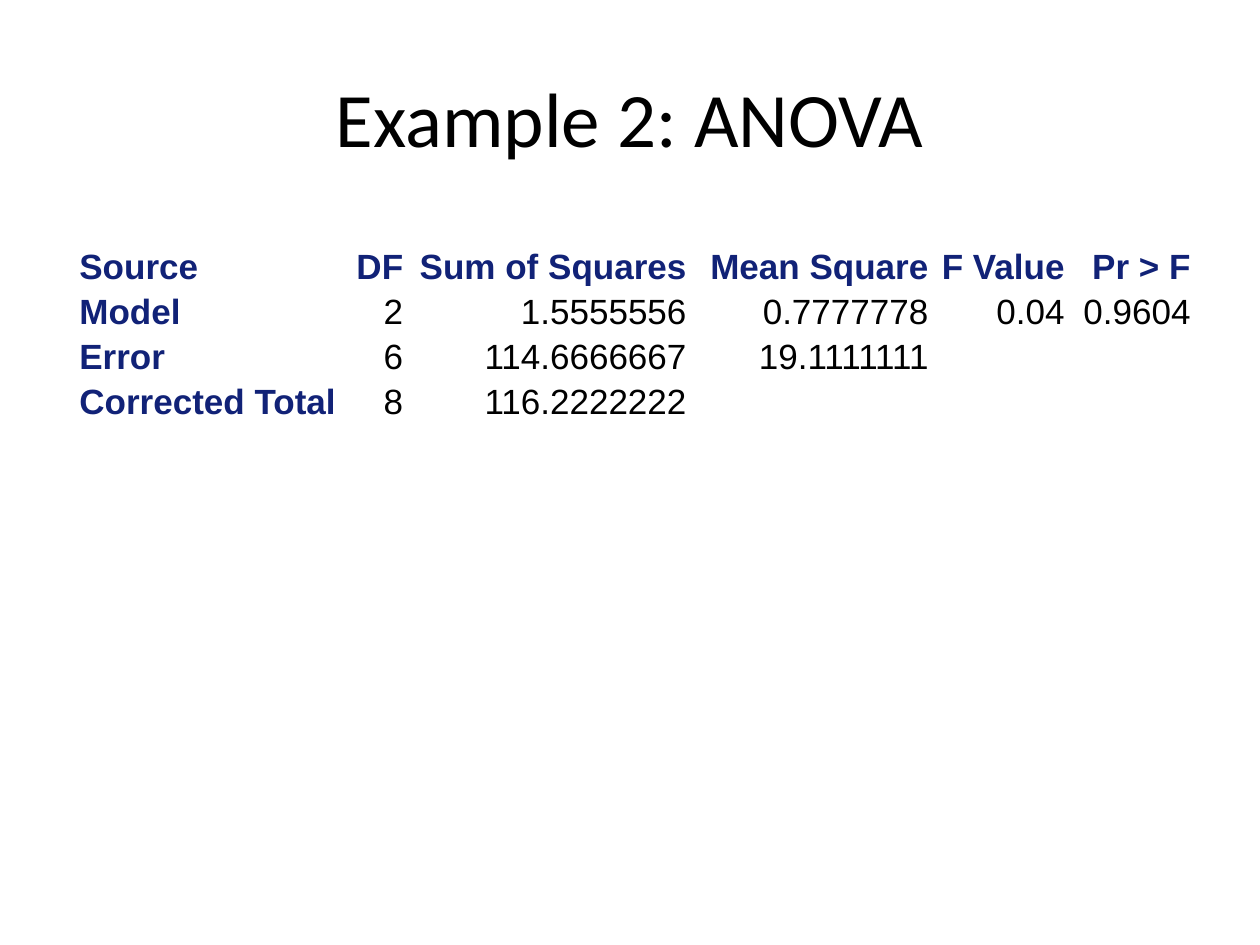
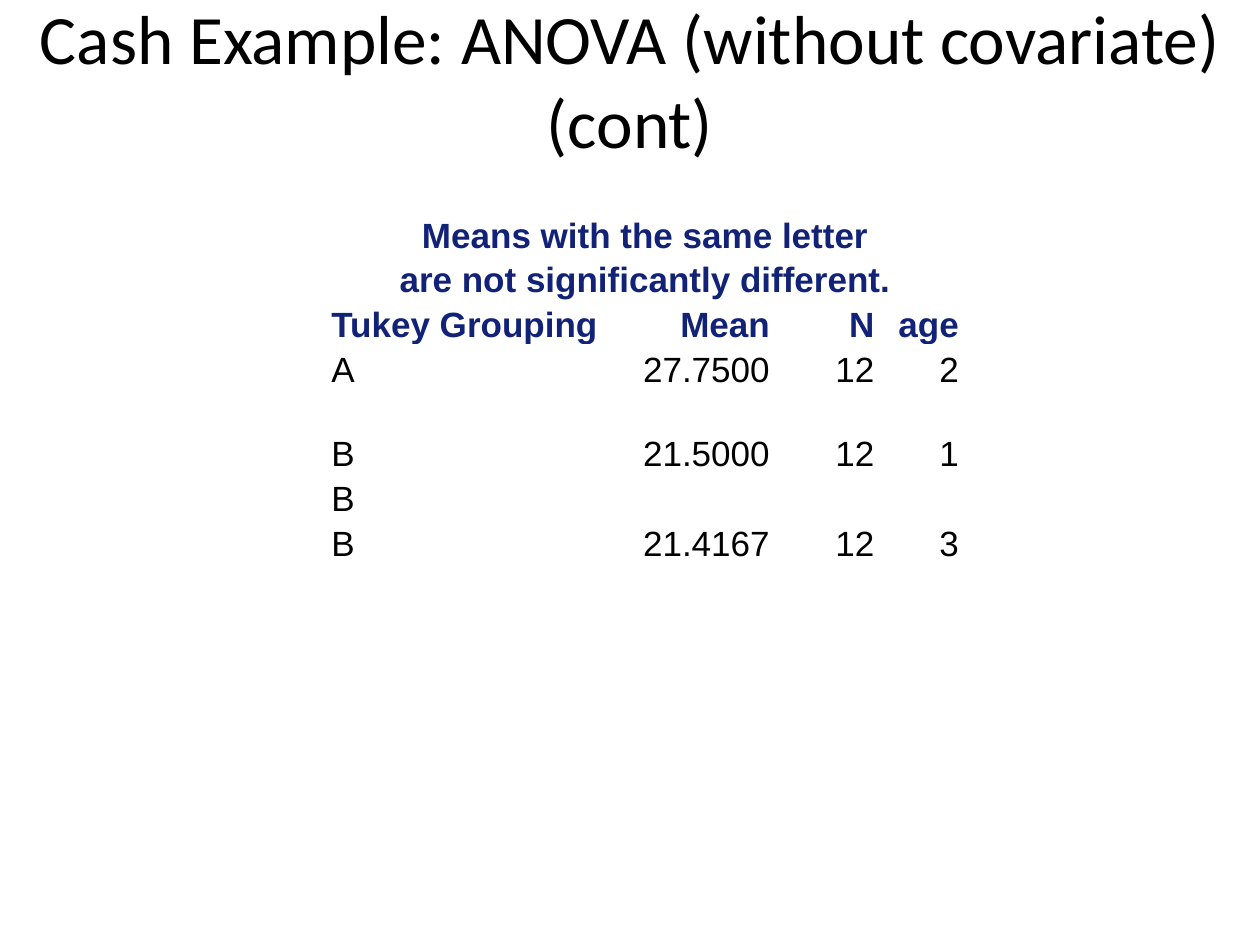
from dataclasses import dataclass

from pptx import Presentation
from pptx import util as u
from pptx.dml import color as c
from pptx.enum import text as t

HUES = {"ink": "000000", "head": "112277", "page": "FFFFFF"}
LEFT, MID, RIGHT = t.PP_ALIGN.LEFT, t.PP_ALIGN.CENTER, t.PP_ALIGN.RIGHT
ROW, GAP = 0.35, 0.31


@dataclass
class Title:
    text: str
    box: tuple[float, float, float, float]
    size: float


@dataclass
class Grid:
    left: float
    top: float
    cols: list[float]
    rows: list[list[str]]
    heads: int = 1
    labels: bool = False
    banner: bool = False


PAGES = [
    (
        Title("Example 2: ANOVA", (0.5, 0.3, 9, 1.25), 44),
        Grid(
            0.58, 1.92, [2.17, 0.5, 2.25, 1.92, 1.08, 1],
            [
                ["Source", "DF", "Sum of Squares", "Mean Square", "F Value", "Pr > F"],
                ["Model", "2", "1.5555556", "0.7777778", "0.04", "0.9604"],
                ["Error", "6", "114.6666667", "19.1111111"],
                ["Corrected Total", "8", "116.2222222"],
            ],
            labels=True,
        ),
    ),
    (
        Title("Cash Example: ANOVA (without covariate) (cont)", (0, 0, 10, 1.25), 39.6),
        Grid(
            2.58, 1.67, [2.33, 1.25, 0.83, 0.67],
            [
                ["Means with the same letter\nare not significantly different."],
                ["Tukey Grouping", "Mean", "N", "age"],
                ["A", "27.7500", "12", "2"],
                [],
                ["B", "21.5000", "12", "1"],
                ["B"],
                ["B", "21.4167", "12", "3"],
            ],
            heads=2,
            banner=True,
        ),
    ),
]


def write(frame, words: str, *, size: float, font: str, hue: str = "ink",
          bold: bool = False, align=LEFT, line: float = 1, pad: float = 0) -> None:
    para = frame.paragraphs[0]
    para.text = words
    para.alignment = align
    para.line_spacing = line
    para.space_before = para.space_after = u.Pt(pad)
    for run in para.runs:
        run.font.size = u.Pt(size)
        run.font.name = font
        run.font.bold = bold
        run.font.color.rgb = c.RGBColor.from_string(HUES[hue])


def draw_title(slide, title: Title) -> None:
    shape = slide.shapes.title
    shape.left, shape.top, shape.width, shape.height = map(u.Inches, title.box)
    frame = shape.text_frame
    frame.word_wrap = True
    frame.auto_size = t.MSO_AUTO_SIZE.NONE
    frame.vertical_anchor = t.MSO_ANCHOR.MIDDLE
    write(frame, title.text, size=title.size, font="Calibri", align=MID)


def draw_grid(slide, grid: Grid) -> None:
    highs = [ROW * (1 + row[0].count("\n")) if row else GAP for row in grid.rows]
    table = slide.shapes.add_table(
        len(grid.rows), len(grid.cols), u.Inches(grid.left), u.Inches(grid.top),
        u.Inches(sum(grid.cols)), u.Inches(sum(highs)),
    ).table
    table.first_row = table.horz_banding = False
    for col, width in zip(table.columns, grid.cols):
        col.width = u.Inches(width)
    for row, high in zip(table.rows, highs):
        row.height = u.Inches(high)
    for cell in table.iter_cells():
        cell.fill.background()
        cell.vertical_anchor = t.MSO_ANCHOR.MIDDLE
        cell.margin_left = cell.margin_right = u.Inches(0.05)
        cell.margin_top = cell.margin_bottom = 0
    if grid.banner:
        table.cell(0, 0).merge(table.cell(0, len(grid.cols) - 1))
    for y, row in enumerate(grid.rows):
        for x, words in enumerate(row):
            bold = y < grid.heads or (grid.labels and x == 0)
            align = MID if grid.banner and y == 0 else RIGHT if x else LEFT
            write(table.cell(y, x).text_frame, words, size=20, font="Arial",
                  hue="head" if bold else "ink", bold=bold, align=align,
                  line=1.15, pad=5)


def main() -> None:
    deck = Presentation()
    deck.slide_width, deck.slide_height = u.Inches(10), u.Inches(7.5)
    for title, grid in PAGES:
        slide = deck.slides.add_slide(deck.slide_layouts[5])
        fill = slide.background.fill
        fill.solid()
        fill.fore_color.rgb = c.RGBColor.from_string(HUES["page"])
        draw_title(slide, title)
        draw_grid(slide, grid)
    deck.save("out.pptx")


if __name__ == "__main__":
    main()
